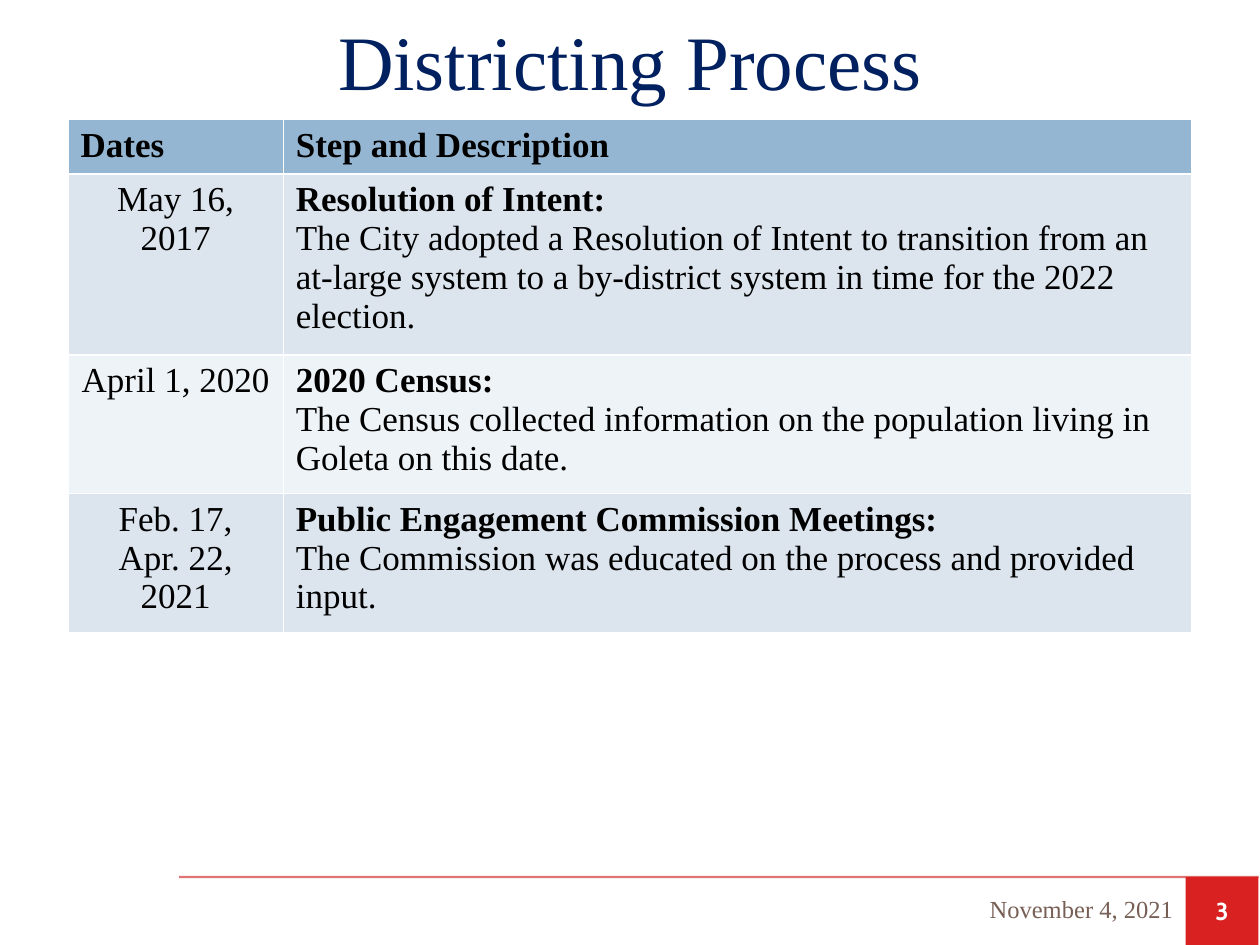
from lxml.etree import SubElement
from pptx import Presentation
from pptx.dml.color import RGBColor
from pptx.enum.shapes import MSO_CONNECTOR, MSO_SHAPE
from pptx.enum.text import MSO_ANCHOR, PP_ALIGN
from pptx.oxml.ns import qn
from pptx.util import Cm, Pt

NAVY = RGBColor(0x00, 0x20, 0x60)
BLACK = RGBColor(0x00, 0x00, 0x00)
WHITE = RGBColor(0xFF, 0xFF, 0xFF)
BROWN = RGBColor(0x77, 0x5F, 0x55)
RED = RGBColor(0xD9, 0x21, 0x21)
RULE_RED = RGBColor(0xC8, 0x00, 0x00)
HEADER_BLUE = RGBColor(0x94, 0xB6, 0xD2)
BANDS = (RGBColor(0xDC, 0xE5, 0xEE), RGBColor(0xEE, 0xF3, 0xF7))

HEADINGS = ("Dates", "Step and Description")
STEPS = [
    ("May 16, 2017", "Resolution of Intent:",
     "The City adopted a Resolution of Intent to transition from an at-large "
     "system to a by-district system in time for the 2022 election."),
    ("April 1, 2020", "2020 Census:",
     "The Census collected information on the population living in Goleta "
     "on this date."),
    ("Feb. 17,\vApr. 22, 2021", "Public Engagement Commission Meetings:",
     "The Commission was educated on the process and provided input."),
]
COLUMN_WIDTHS = (4.34, 18.31)
ROW_HEIGHTS = (0.84, 3.3, 1.75, 2.51)


class SlideBuilder:
    serif = "Times New Roman"

    def __init__(self, slide):
        self.slide = slide

    def set_text(self, paragraph, text, size, color, align=PP_ALIGN.LEFT,
                 bold=False, name=serif):
        paragraph.text = text
        paragraph.alignment = align
        formats = {"size": Pt(size), "bold": bold, "name": name}
        for run in paragraph.runs:
            for attribute, value in formats.items():
                setattr(run.font, attribute, value)
            run.font.color.rgb = color

    def fill_frame(self, frame, text, size, color, **formats):
        frame.word_wrap = True
        frame.vertical_anchor = MSO_ANCHOR.MIDDLE
        self.set_text(frame.paragraphs[0], text, size, color, **formats)

    def title(self, text, left, top, width, height):
        title = self.slide.shapes.title
        place = {"left": left, "top": top, "width": width, "height": height}
        for attribute, value in place.items():
            setattr(title, attribute, Cm(value))
        self.fill_frame(title.text_frame, text, 44, NAVY,
                        align=PP_ALIGN.CENTER)

    def rule(self, left, right, y):
        rule = self.slide.shapes.add_connector(
            MSO_CONNECTOR.STRAIGHT, Cm(left), Cm(y), Cm(right), Cm(y))
        rule.line.color.rgb = RULE_RED
        rule.line.width = Pt(1.25)
        properties = rule._element.spPr
        color = properties.find(".//" + qn("a:srgbClr"))
        SubElement(color, qn("a:alpha")).set("val", "55000")
        SubElement(properties, qn("a:effectLst"))

    def number_box(self, text, *place):
        box = self.slide.shapes.add_shape(MSO_SHAPE.RECTANGLE, *map(Cm, place))
        box.shadow.inherit = False
        box.fill.solid()
        box.fill.fore_color.rgb = RED
        box.line.fill.background()
        self.fill_frame(box.text_frame, text, 14, WHITE,
                        align=PP_ALIGN.CENTER, bold=True, name="Cabin")

    def date(self, text, *place):
        date = self.slide.shapes.add_textbox(*map(Cm, place))
        self.fill_frame(date.text_frame, text, 14, BROWN,
                        align=PP_ALIGN.RIGHT)

    def cell(self, cell, fill, *lines, align=PP_ALIGN.LEFT):
        """Each line is a (text, bold) pair and becomes one paragraph."""
        cell.fill.solid()
        cell.fill.fore_color.rgb = fill
        frame = cell.text_frame
        for index, (text, bold) in enumerate(lines):
            paragraph = frame.add_paragraph() if index else frame.paragraphs[0]
            self.set_text(paragraph, text, 20, BLACK, align=align, bold=bold)

    def steps_table(self, left, top):
        table = self.slide.shapes.add_table(
            len(ROW_HEIGHTS), len(COLUMN_WIDTHS), Cm(left), Cm(top),
            Cm(sum(COLUMN_WIDTHS)), Cm(sum(ROW_HEIGHTS))).table
        for column, width in zip(table.columns, COLUMN_WIDTHS):
            column.width = Cm(width)
        for row, height in zip(table.rows, ROW_HEIGHTS):
            row.height = Cm(height)

        for column, heading in enumerate(HEADINGS):
            self.cell(table.cell(0, column), HEADER_BLUE, (heading, True))
        for row, (dates, step, description) in enumerate(STEPS, start=1):
            band = BANDS[(row - 1) % 2]
            self.cell(table.cell(row, 0), band, (dates, False),
                      align=PP_ALIGN.CENTER)
            self.cell(table.cell(row, 1), band, (step, True),
                      (description, False))


def main():
    deck = Presentation()
    deck.slide_width, deck.slide_height = Cm(25.4), Cm(19.05)
    builder = SlideBuilder(deck.slides.add_slide(deck.slide_layouts[5]))

    # Footer rule and slide number
    builder.rule(3.61, 25.37, 17.68)
    builder.number_box("3", 23.9, 17.68, 1.47, 1.37)

    # Title and meeting date
    builder.title("Districting Process", 0.03, 0, 25.35, 2.41)
    builder.date("November 4, 2021", 16.48, 17.81, 7.42, 1.02)

    # Process steps
    builder.steps_table(1.37, 2.41)

    deck.save("out.pptx")


if __name__ == "__main__":
    main()
